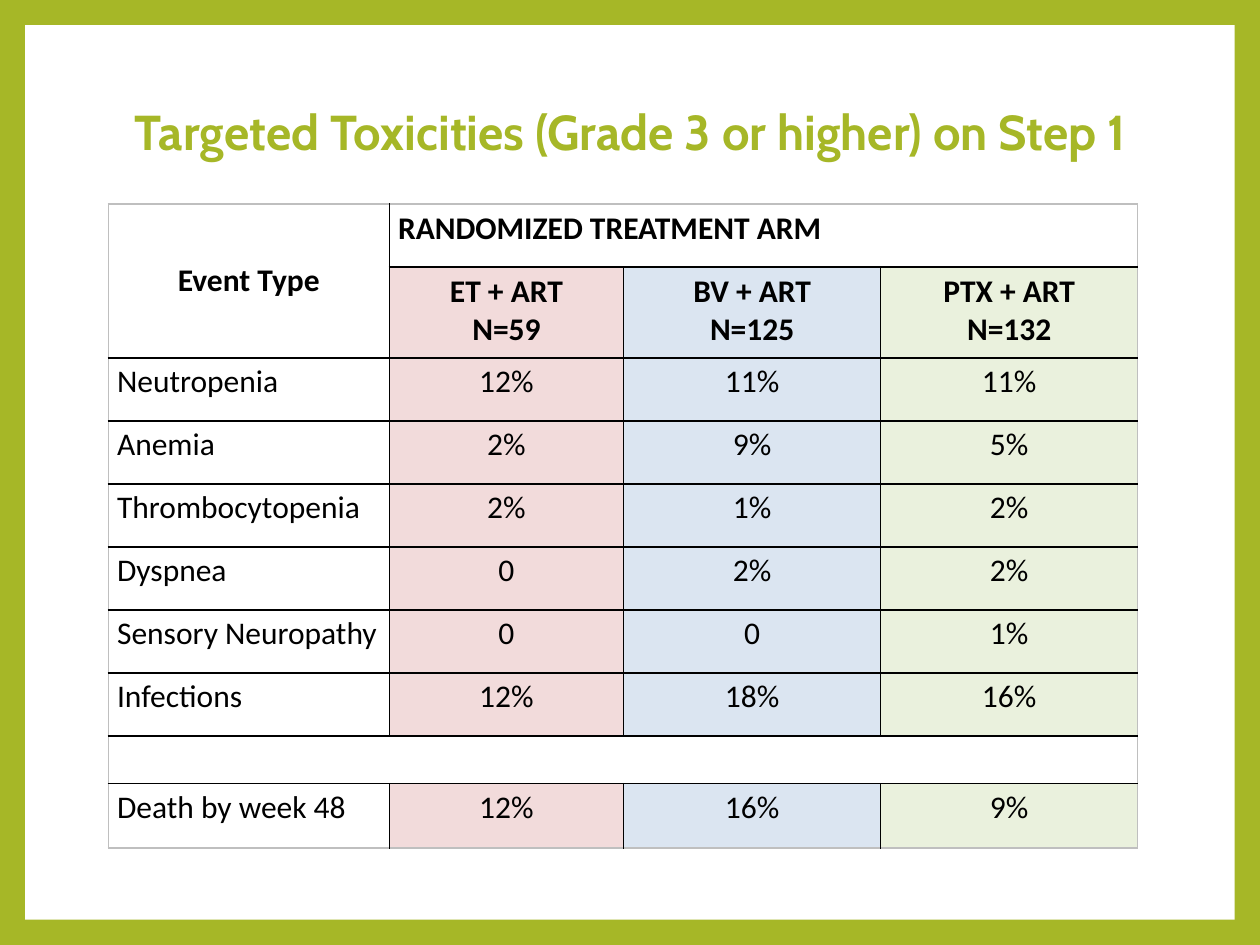
from pptx import Presentation
from pptx.dml.color import RGBColor
from pptx.enum.shapes import MSO_SHAPE
from pptx.enum.text import MSO_ANCHOR, PP_ALIGN
from pptx.oxml import parse_xml
from pptx.oxml.ns import nsdecls
from pptx.util import Inches, Pt


def paint(fmt, color):
    fmt.solid()
    fmt.fore_color.rgb = RGBColor.from_string(color)


def write(tf, text, align, color, fmt):
    for i, line in enumerate(text.split("\n")):
        p = tf.paragraphs[0] if i == 0 else tf.add_paragraph()
        p.alignment = align
        r = p.add_run()
        r.text = line
        paint(r.font.fill, color)
        for key, value in fmt.items():
            setattr(r.font, key, value)


GREEN, BLACK, GREY = "A6B727", "000000", "BFBFBF"
ARM_FILLS = ["F2DBDB", "DBE5F1", "EAF1DD"]
COLS = [2.23, 1.86, 2.04, 2.04]
ROWS = [0.5, 0.72] + [0.5] * 6 + [0.38, 0.51]
DATA = [
    ["Event Type", "RANDOMIZED TREATMENT ARM", "", ""],
    ["", "ET + ART\nN=59", "BV + ART\nN=125", "PTX + ART\nN=132"],
    ["Neutropenia", "12%", "11%", "11%"],
    ["Anemia", "2%", "9%", "5%"],
    ["Thrombocytopenia", "2%", "1%", "2%"],
    ["Dyspnea", "0", "2%", "2%"],
    ["Sensory Neuropathy", "0", "0", "1%"],
    ["Infections", "12%", "18%", "16%"],
    ["", "", "", ""],
    ["Death by week 48", "12%", "16%", "9%"],
]
SPANS = [((0, 0), (1, 0)), ((0, 1), (0, 3)), ((8, 0), (8, 3))]

prs = Presentation()
prs.slide_width, prs.slide_height = Inches(10), Inches(7.5)
W, H = prs.slide_width, prs.slide_height
s = prs.slides.add_slide(prs.slide_layouts[6])
paint(s.background.fill, GREEN)

frame = Inches(0.2)
sp = s.shapes.add_shape(MSO_SHAPE.RECTANGLE, frame, frame, W - 2 * frame, H - 2 * frame)
sp.shadow.inherit = False
sp.line.fill.background()
paint(sp.fill, "FFFFFF")

left = Inches(0.86)
tf = s.shapes.add_textbox(left, Inches(0.79), W - 2 * left, Inches(0.56)).text_frame
for key, value in {"word_wrap": True, "vertical_anchor": MSO_ANCHOR.MIDDLE,
                   "margin_left": 0, "margin_right": 0,
                   "margin_top": 0, "margin_bottom": 0}.items():
    setattr(tf, key, value)
write(tf, "Targeted Toxicities (Grade 3 or higher) on Step 1", PP_ALIGN.CENTER, GREEN,
      {"name": "Cabin", "size": Pt(28), "bold": True})
tf.paragraphs[0].line_spacing = 0.9

table = s.shapes.add_table(len(ROWS), len(COLS), left, Inches(1.62),
                           Inches(sum(COLS)), Inches(sum(ROWS))).table
table.first_row = table.horz_banding = False
for col, width in zip(table.columns, COLS):
    col.width = Inches(width)
for row, height in zip(table.rows, ROWS):
    row.height = Inches(height)
for start, end in SPANS:
    table.cell(*start).merge(table.cell(*end))

for i, row in enumerate(DATA):
    for j, text in enumerate(row):
        cell = table.cell(i, j)
        for key, value in {"margin_left": 0.07, "margin_right": 0.07,
                           "margin_top": 0.04, "margin_bottom": 0.04}.items():
            setattr(cell, key, Inches(value))
        if cell.is_spanned:
            continue
        if (i, j) == (0, 0):
            cell.vertical_anchor = MSO_ANCHOR.MIDDLE
        outer = {"lnL": j == 0, "lnR": j + cell.span_width == len(COLS),
                 "lnT": i == 0, "lnB": i + cell.span_height == len(ROWS)}
        for side, is_outer in outer.items():
            cell._tc.get_or_add_tcPr().append(parse_xml(
                f'<a:{side} {nsdecls("a")} w="12700"><a:solidFill>'
                f'<a:srgbClr val="{GREY if is_outer else BLACK}"/>'
                f'</a:solidFill></a:{side}>'))
        if i > 0 and j > 0:
            paint(cell.fill, ARM_FILLS[j - 1])
        else:
            cell.fill.background()
        if text:
            is_left = (j == 0 and i > 0) or (i, j) == (0, 1)
            write(cell.text_frame, text, PP_ALIGN.LEFT if is_left else PP_ALIGN.CENTER,
                  BLACK, {"name": "Calibri", "size": Pt(18), "bold": i < 2})

prs.save("out.pptx")
